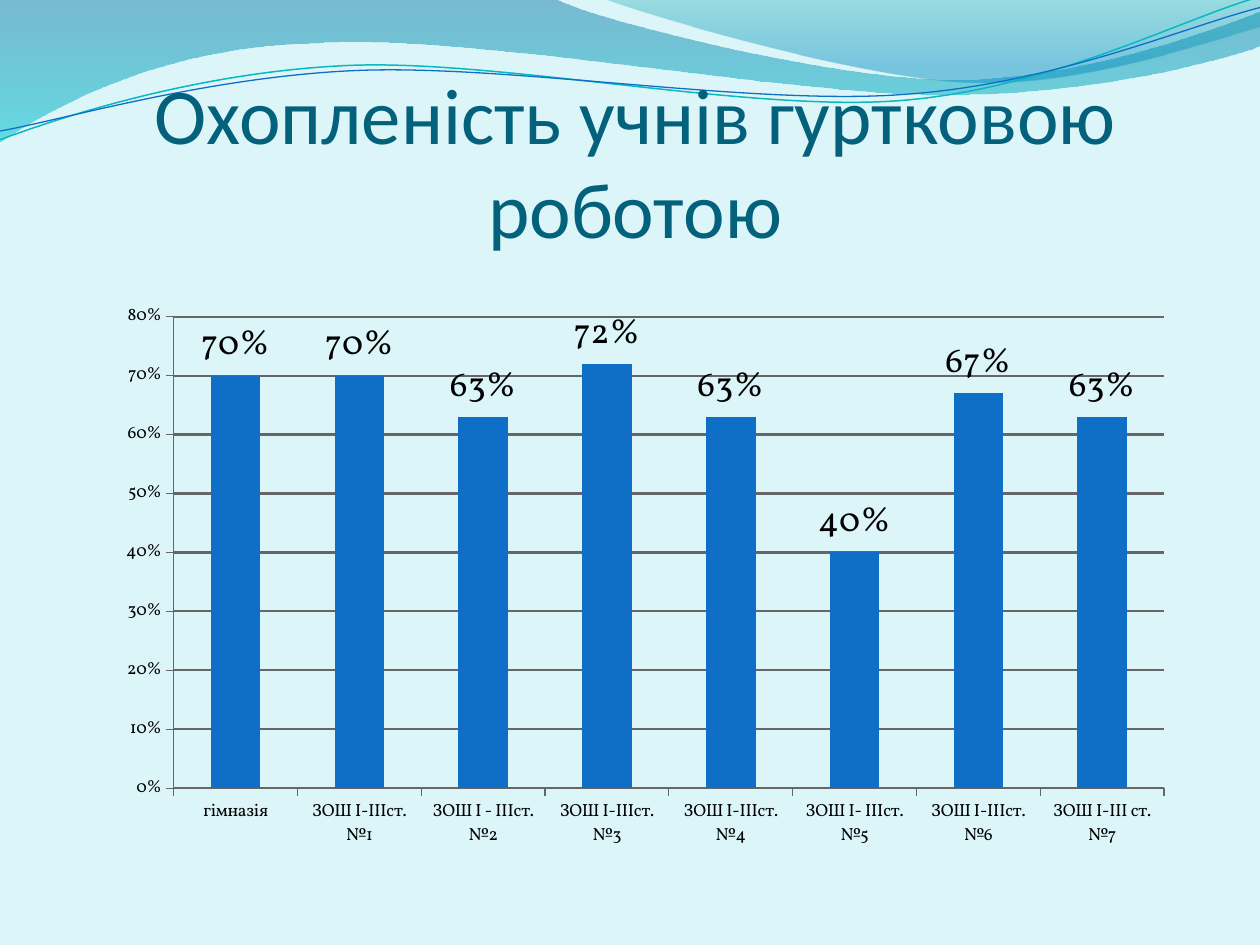
from lxml import etree
from pptx import Presentation
from pptx.chart.data import CategoryChartData
from pptx.dml.color import RGBColor
from pptx.enum import chart as ch, text
from pptx.oxml.ns import qn
from pptx.util import Inches, Pt

TITLE = "Охопленість учнів гуртковою роботою"
COVERAGE = [
    ("гімназія", 0.70),
    ("ЗОШ І-ІІІст.№1", 0.70),
    ("ЗОШ І - ІІІст.№2", 0.63),
    ("ЗОШ І-ІІІст.№3", 0.72),
    ("ЗОШ І-ІІІст.№4", 0.63),
    ("ЗОШ І- ІІІст.№5", 0.40),
    ("ЗОШ І-ІІІст.№6", 0.67),
    ("ЗОШ І-ІІІ ст.№7", 0.63),
]
BLUE, AXIS_GREY = "0F6FC6", "666666"

# Each step is an end point (2 numbers) or a cubic curve (6 numbers), in inches.
# Gradient stops are (position, colour, opacity in percent), from top to bottom.
BANDS = [
    ([(0, 0), (4.4, -0.01), (4.76, 0.17, 6.64, 0.63, 7.58, 0.63),
      (8.53, 0.63, 9.58, 0.26, 10, 0.09), (10.01, 0.36),
      (9.83, 0.44, 8.7, 0.76, 7.46, 0.75), (6.22, 0.75, 3.82, 0.28, 2.57, 0.34),
      (1.29, 0.36, 0.46, 0.83, -0.01, 1.13)],
     [(0, "0074A1", 45), (1, "00C6CF", 55)]),
    ([(4.79, -0.01), (5.09, 0.11, 6.82, 0.62, 7.69, 0.65),
      (8.56, 0.69, 9.61, 0.32, 10, 0.21), (10, 0)],
     [(0, "00A1A9", 30), (0.8, "008BBF", 45)]),
]
WAVES = [
    ([(0, 1.11), (0.48, 0.93, 1.58, 0.57, 2.77, 0.52),
      (3.95, 0.47, 5.93, 0.89, 7.13, 0.8), (8.33, 0.71, 9.38, 0.15, 9.98, -0.02)],
     "0AB8BF", 0.85),
    ([(0, 1.04), (0.47, 0.96, 1.64, 0.61, 2.83, 0.56),
      (4.03, 0.51, 5.97, 0.84, 7.17, 0.75), (8.36, 0.67, 9.41, 0.21, 10, 0.06)],
     BLUE, 0.75),
]


def color(hex_string):
    return RGBColor.from_string(hex_string)


def add_outline(slide, steps, close):
    """Build the outline from its end points, then bend the curved segments."""
    steps = [[Inches(number) for number in step] for step in steps]
    builder = slide.shapes.build_freeform(*steps[0], scale=1.0)
    builder.add_line_segments([step[-2:] for step in steps[1:]], close=close)
    shape = builder.convert_to_shape()
    shape.shadow.inherit = False
    segments = list(shape.element.spPr.iter(qn("a:lnTo")))
    for segment, step in zip(segments, steps[1:]):
        if len(step) == 2:
            continue
        curve = etree.Element(qn("a:cubicBezTo"))
        for x, y in zip(step[::2], step[1::2]):
            point = etree.SubElement(curve, qn("a:pt"))
            point.set("x", str(x - shape.left))
            point.set("y", str(y - shape.top))
        segment.getparent().replace(segment, curve)
    return shape


def add_band(slide, steps, stops):
    shape = add_outline(slide, steps, close=True)
    shape.line.fill.background()
    shape.fill.gradient()
    shape.fill.gradient_angle = 270
    for stop, (position, hex_string, _) in zip(shape.fill.gradient_stops, stops):
        stop.position = position
        stop.color.rgb = color(hex_string)
    tags = shape.element.spPr.iter(qn("a:srgbClr"))
    for tag, (_, _, opacity) in zip(tags, stops):
        etree.SubElement(tag, qn("a:alpha")).set("val", str(opacity * 1000))


def add_wave(slide, steps, hex_string, width):
    shape = add_outline(slide, steps, close=False)
    shape.fill.background()
    shape.line.color.rgb = color(hex_string)
    shape.line.width = Pt(width)


def set_font(font, name, size, hex_string):
    font.name, font.size = name, Pt(size)
    font.color.rgb = color(hex_string)


def add_text(slide, content, left, top, width, height, *, name, size, hex_string):
    box = slide.shapes.add_textbox(*map(Inches, (left, top, width, height)))
    frame = box.text_frame
    frame.word_wrap = True
    frame.vertical_anchor = text.MSO_ANCHOR.BOTTOM
    frame.margin_left = frame.margin_right = frame.margin_bottom = 0
    paragraph = frame.paragraphs[0]
    paragraph.alignment = text.PP_ALIGN.CENTER
    run = paragraph.add_run()
    run.text = content
    set_font(run.font, name, size, hex_string)


def add_coverage_chart(slide, left, top, width, height):
    data = CategoryChartData(number_format="0%")
    data.categories = [school for school, _ in COVERAGE]
    data.add_series("Series 1", [share for _, share in COVERAGE])
    chart = slide.shapes.add_chart(ch.XL_CHART_TYPE.COLUMN_CLUSTERED,
                                   *map(Inches, (left, top, width, height)), data).chart
    chart.has_legend = chart.has_title = False
    set_font(chart.font, "Vollkorn", 10, "000000")

    values = chart.value_axis
    values.minimum_scale, values.maximum_scale, values.major_unit = 0, 0.8, 0.1
    values.has_major_gridlines = True
    values.tick_labels.number_format = "0%"
    values.tick_labels.number_format_is_linked = False
    values.major_gridlines.format.line.color.rgb = color(AXIS_GREY)
    values.major_gridlines.format.line.width = Pt(1.25)
    for axis in (values, chart.category_axis):
        axis.major_tick_mark = ch.XL_TICK_MARK.OUTSIDE
        axis.format.line.color.rgb = color(AXIS_GREY)
        axis.format.line.width = Pt(0.75)

    plot = chart.plots[0]
    plot.gap_width = 150
    plot.vary_by_categories = False
    series = plot.series[0]
    series.format.fill.solid()
    series.format.fill.fore_color.rgb = color(BLUE)
    labels = series.data_labels
    labels.show_value = True
    labels.number_format, labels.number_format_is_linked = "0%", False
    labels.position = ch.XL_LABEL_POSITION.OUTSIDE_END
    set_font(labels.font, "Vollkorn", 20, "000000")


def main():
    presentation = Presentation()
    presentation.slide_width, presentation.slide_height = Inches(10), Inches(7.5)
    slide = presentation.slides.add_slide(presentation.slide_layouts[6])
    slide.background.fill.solid()
    slide.background.fill.fore_color.rgb = color("DBF5F9")
    for band in BANDS:
        add_band(slide, *band)
    for wave in WAVES:
        add_wave(slide, *wave)
    add_text(slide, TITLE, 0.5, 0.77, 9.08, 1.25,
             name="Calibri", size=45, hex_string="04617B")
    add_coverage_chart(slide, 0.83, 2.33, 8.58, 4.49)
    presentation.save("out.pptx")


if __name__ == "__main__":
    main()
